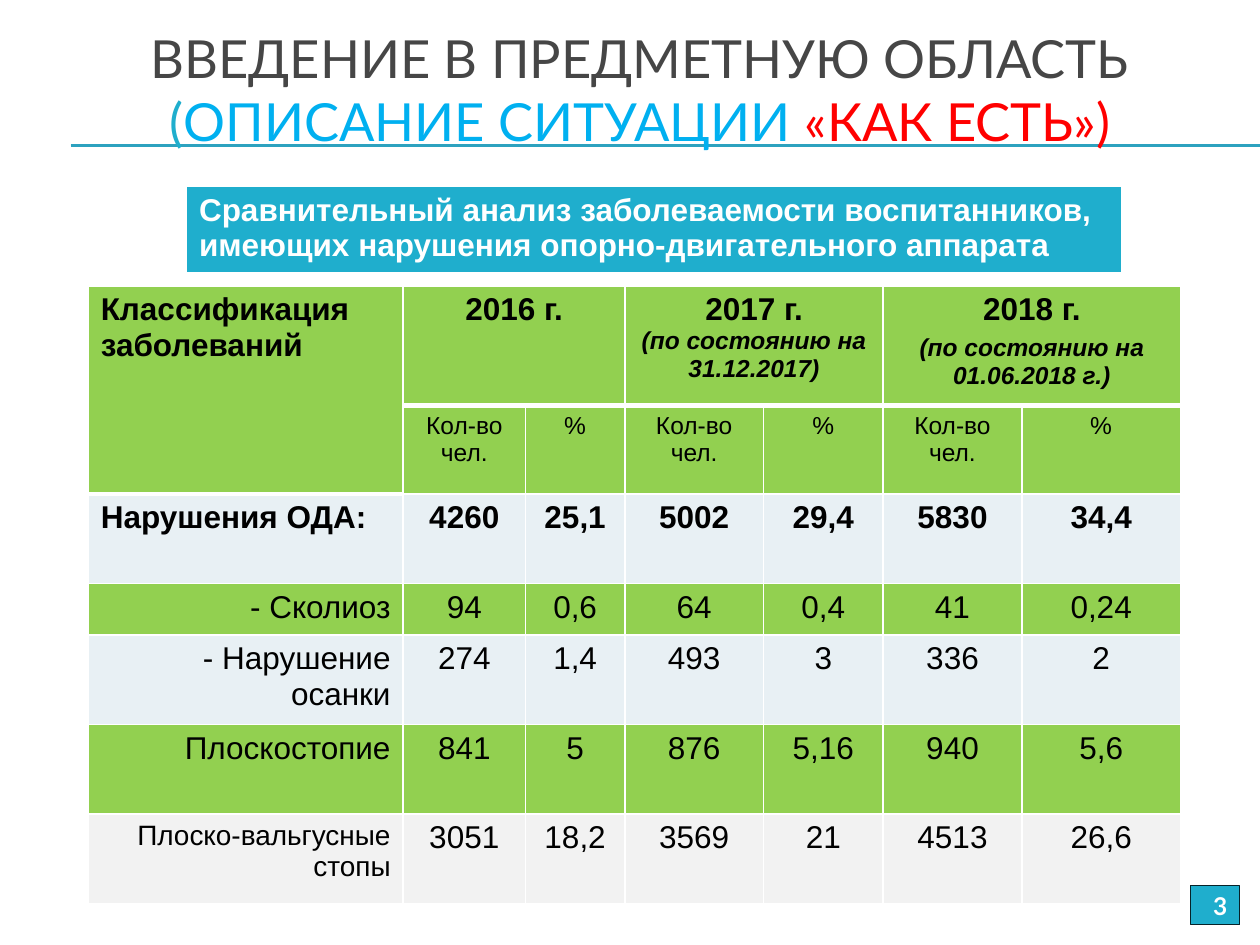
from lxml import etree
from pptx import Presentation
from pptx.dml.color import RGBColor
from pptx.enum import shapes, text
from pptx.oxml import ns
from pptx.util import Inches, Pt

COLORS = {
    "line": "2DA2BF", "title": "464646", "teal": "1FAECD", "blue": "00B0F0",
    "red": "FF0000", "green": "92D050", "pale": "E8F0F4", "grey": "F2F2F2",
    "white": "FFFFFF", "black": "000000", "outline": "062329",
}
RGB = {name: RGBColor.from_string(value) for name, value in COLORS.items()}
LEFT, CENTER, RIGHT = text.PP_ALIGN.LEFT, text.PP_ALIGN.CENTER, text.PP_ALIGN.RIGHT


def style_cell(cell, fill, bottom=1):
    """Give a cell white borders (bottom width in points) and a solid fill."""
    tc_pr = cell._tc.get_or_add_tcPr()
    for side, width in (("L", 1), ("R", 1), ("T", 1), ("B", bottom)):
        ln = etree.SubElement(tc_pr, ns.qn("a:ln" + side), w=str(Pt(width)))
        solid = etree.SubElement(ln, ns.qn("a:solidFill"))
        etree.SubElement(solid, ns.qn("a:srgbClr"), val=COLORS["white"])
    cell.fill.solid()
    cell.fill.fore_color.rgb = RGB[fill]


def style_text(p, size, color="black", align=LEFT, bold=False, italic=False, name="Arial"):
    p.alignment = align
    for r in p.runs:
        r.font.name, r.font.size = name, Pt(size)
        r.font.bold, r.font.italic = bold, italic
        r.font.color.rgb = RGB[color]


prs = Presentation()
prs.slide_width, prs.slide_height = Inches(10), Inches(7.5)
s = prs.slides.add_slide(prs.slide_layouts[6])

# Double rule under the title
for y in (1.15, 1.16):
    rule = s.shapes.add_connector(shapes.MSO_CONNECTOR.STRAIGHT,
                                  Inches(0.56), Inches(y), Inches(10), Inches(y))
    rule.line.color.rgb = RGB["line"]
    rule.line.width = Pt(0.75)
    etree.SubElement(rule._element.spPr, ns.qn("a:effectLst"))

# Title
tf = s.shapes.add_textbox(Inches(0.33), Inches(0.5), Inches(9.5), Inches(0.92)).text_frame
tf.word_wrap = True
tf.vertical_anchor = text.MSO_ANCHOR.MIDDLE
tf.margin_bottom = Inches(0.55)
p = tf.paragraphs[0]
title_runs = [
    ("ВВЕДЕНИЕ В ПРЕДМЕТНУЮ ОБЛАСТЬ", "title"),
    ("(", "teal"),
    ("ОПИСАНИЕ СИТУАЦИИ ", "blue"),
    ("«КАК ЕСТЬ»)", "red"),
]
for i, (words, color) in enumerate(title_runs):
    if i == 1:
        p.add_line_break()
    p.add_run().text = words
style_text(p, 30, align=CENTER, name="Lato")
for r, (words, color) in zip(p.runs, title_runs):
    r.font.color.rgb = RGB[color]

# Caption table
caption = s.shapes.add_table(1, 1, Inches(1.48), Inches(1.48),
                             Inches(7.42), Inches(0.68)).table.cell(0, 0)
caption.text = ("Сравнительный анализ заболеваемости воспитанников, "
                "имеющих нарушения опорно-двигательного аппарата")
style_cell(caption, "teal", bottom=3)
style_text(caption.text_frame.paragraphs[0], 18, "white", bold=True)

# Morbidity table
col_widths = [2.5, 0.97, 0.79, 1.1, 0.95, 1.1, 1.26]
row_heights = [0.95, 0.66, 0.71, 0.41, 0.71, 0.71, 0.71]
row_fills = ["green", "green", "pale", "green", "pale", "green", "grey"]
years = [
    ["2016 г."],
    ["2017 г.", "(по состоянию на 31.12.2017)"],
    ["2018 г.", "(по состоянию на 01.06.2018 г.)"],
]
data = [
    ["Нарушения ОДА:", "4260", "25,1", "5002", "29,4", "5830", "34,4"],
    ["- Сколиоз", "94", "0,6", "64", "0,4", "41", "0,24"],
    ["- Нарушение осанки", "274", "1,4", "493", "3", "336", "2"],
    ["Плоскостопие", "841", "5", "876", "5,16", "940", "5,6"],
    ["Плоско-вальгусные стопы", "3051", "18,2", "3569", "21", "4513", "26,6"],
]
table = s.shapes.add_table(len(row_heights), len(col_widths), Inches(0.7), Inches(2.27),
                           Inches(sum(col_widths)), Inches(sum(row_heights))).table
for col, width in zip(table.columns, col_widths):
    col.width = Inches(width)
for row, height in zip(table.rows, row_heights):
    row.height = Inches(height)
for i, fill in enumerate(row_fills):
    for j in range(len(col_widths)):
        heavy = i == 0 or (i, j) == (1, 0)
        style_cell(table.cell(i, j), fill, bottom=3 if heavy else 1)

corner = table.cell(0, 0)
corner.merge(table.cell(1, 0))
corner.text = "Классификация заболеваний"
style_text(corner.text_frame.paragraphs[0], 18, bold=True)

for j, lines in zip((1, 3, 5), years):
    year = table.cell(0, j)
    year.merge(table.cell(0, j + 1))
    year.text = "\n".join(lines)
    for k, p in enumerate(year.text_frame.paragraphs):
        style_text(p, 14 if k else 18, align=CENTER, bold=True, italic=k > 0)
    for cell, words in ((table.cell(1, j), "Кол-во чел."), (table.cell(1, j + 1), "%")):
        cell.text = words
        style_text(cell.text_frame.paragraphs[0], 14, align=CENTER)
table.cell(0, 5).text_frame.paragraphs[1].space_before = Pt(4)

for i, values in enumerate(data):
    for j, value in enumerate(values):
        cell = table.cell(i + 2, j)
        cell.text = value
        align = CENTER if j else RIGHT if i else LEFT
        size = 16 if j == 0 and i == len(data) - 1 else 18
        style_text(cell.text_frame.paragraphs[0], size, align=align, bold=i == 0)

# Slide number
sp = s.shapes.add_shape(shapes.MSO_SHAPE.RECTANGLE,
                        Inches(9.45), Inches(7.03), Inches(0.39), Inches(0.31))
sp.shadow.inherit = False
sp.fill.solid()
sp.fill.fore_color.rgb = RGB["teal"]
sp.line.color.rgb = RGB["outline"]
sp.line.width = Pt(0.75)
sp.text_frame.text = "3"
sp.text_frame.vertical_anchor = text.MSO_ANCHOR.MIDDLE
style_text(sp.text_frame.paragraphs[0], 14, "white", RIGHT, bold=True, name="Lato")

prs.save("out.pptx")
